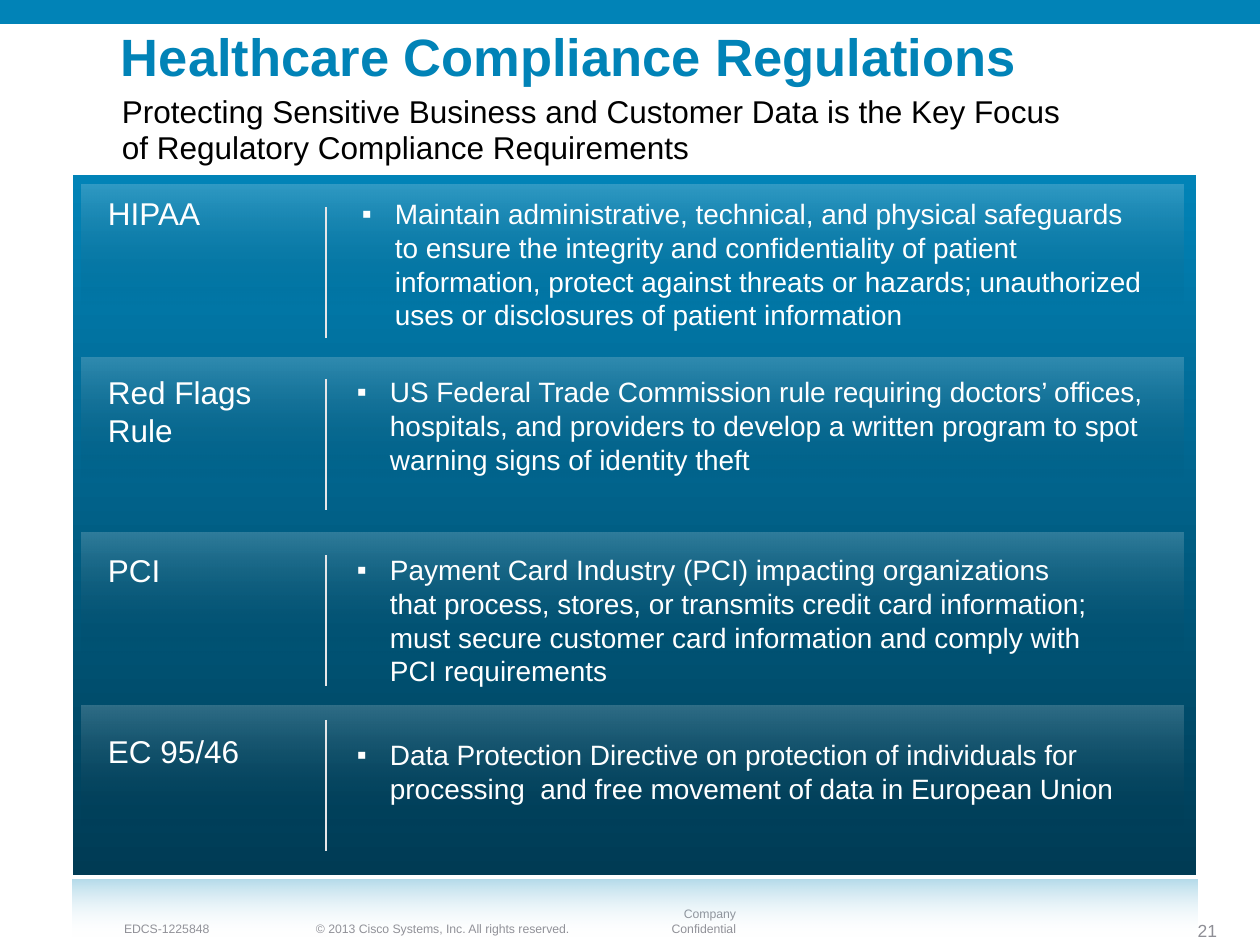
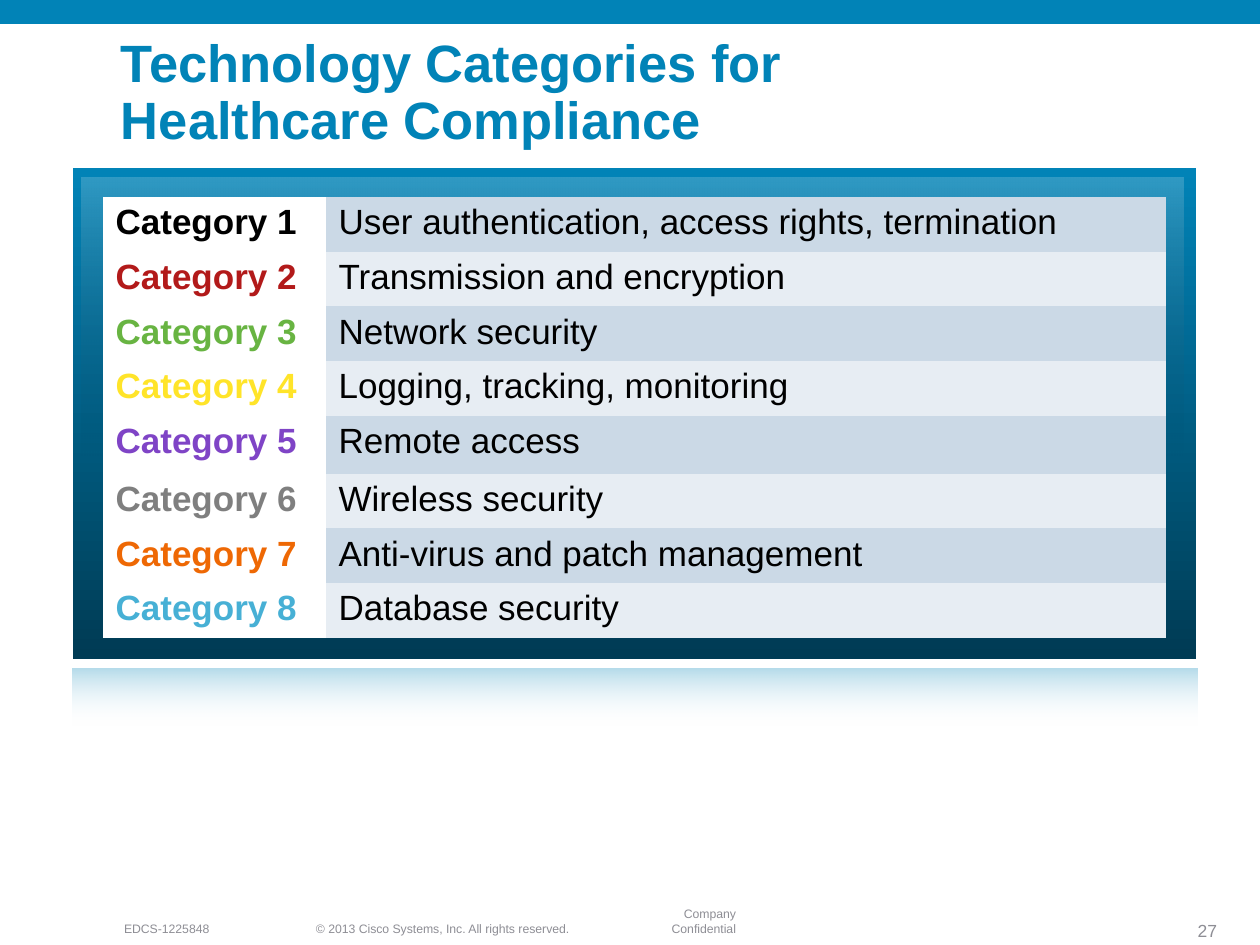
from pptx import Presentation
from pptx.dml.color import RGBColor as RGB
from pptx.enum.shapes import MSO_CONNECTOR as Link, MSO_SHAPE as Kind
from pptx.enum.text import MSO_ANCHOR as Anchor, PP_ALIGN as Align
from pptx.oxml.ns import qn
from pptx.util import Inches, Pt
from lxml.etree import SubElement as Sub

PX = 7257
BLUE = RGB(0x01, 0x83, 0xB7)
NAVY = RGB(0x00, 0x3B, 0x54)
WHITE = RGB(0xFF, 0xFF, 0xFF)
BLACK = RGB(0x00, 0x00, 0x00)
GRAY = RGB(0x8E, 0x8E, 0x95)
RULE = RGB(0xE6, 0xE6, 0xE8)
BANDS = [RGB(0xCB, 0xD9, 0xE6), RGB(0xE7, 0xED, 0xF3)]
FONT = "Arial"


def write(slide, text, x, y, w, h, size, color, bold=False, low=False,
          align=Align.LEFT, space=None, pad=5, bullet=False):
    box = slide.shapes.add_textbox(x * PX, y * PX, w * PX, h * PX)
    frame = box.text_frame
    frame.word_wrap = True
    frame.margin_left = frame.margin_right = 12 * PX
    frame.margin_top = frame.margin_bottom = pad * PX
    frame.vertical_anchor = Anchor.BOTTOM if low else Anchor.TOP
    para = frame.paragraphs[0]
    para.text = text
    para.alignment = align
    if space:
        para.line_spacing = space
    if bullet:
        props = para._p.get_or_add_pPr()
        props.set("marL", str(33 * PX))
        props.set("indent", str(-33 * PX))
        tint = Sub(props, qn("a:buClr"))
        Sub(tint, qn("a:srgbClr"), val=str(color))
        Sub(props, qn("a:buFont"), typeface=FONT)
        Sub(props, qn("a:buChar"), char="▪")
    for run in para.runs:
        run.font.name = FONT
        run.font.size = Pt(size)
        run.font.bold = bold
        run.font.color.rgb = color


def fade(slide, kind, x, y, w, h, colors, alphas=(100, 100)):
    shape = slide.shapes.add_shape(kind, x * PX, y * PX, w * PX, h * PX)
    shape.shadow.inherit = False
    shape.line.fill.background()
    shape.fill.gradient()
    shape.fill.gradient_angle = 270
    for stop, place, color in zip(shape.fill.gradient_stops, (0, 1), colors):
        stop.position = place
        stop.color.rgb = color
    marks = shape._element.spPr.iter(qn("a:srgbClr"))
    for mark, alpha in zip(list(marks), alphas):
        if alpha < 100:
            Sub(mark, qn("a:alpha"), val=str(alpha * 1000))
    if kind == Kind.ROUNDED_RECTANGLE:
        shape.adjustments[0] = 0


deck = Presentation()
deck.slide_width, deck.slide_height = Inches(10), Inches(7.5)

pages = [
    ("21", "Healthcare Compliance Regulations", 26, 68, 175, 700,
     [185, 358, 533, 706], 121, 880),
    ("27", "Technology Categories for\nHealthcare Compliance", 42, 115, 168, 491,
     [178], 281, 669),
]
for num, title, top, high, edge, tall, tiers, depth, base in pages:
    slide = deck.slides.add_slide(deck.slide_layouts[6])
    band = slide.shapes.add_shape(Kind.RECTANGLE, 0, 0, deck.slide_width, 24 * PX)
    band.shadow.inherit = False
    band.fill.solid()
    band.fill.fore_color.rgb = BLUE
    band.line.fill.background()
    write(slide, "EDCS-1225848", 112, 915, 132, 26, 7, GRAY, low=True)
    write(slide, "© 2013 Cisco Systems, Inc. All rights reserved.",
          304, 915, 300, 26, 7, GRAY, low=True)
    write(slide, "Company Confidential", 610, 915, 138, 26, 7, GRAY,
          low=True, align=Align.RIGHT)
    write(slide, num, 1169, 913, 60, 33, 10, GRAY, low=True, align=Align.RIGHT)
    write(slide, title, 109, top, 1025, high, 30, BLUE, bold=True, low=True,
          space=0.9, pad=6)
    fade(slide, Kind.RECTANGLE, 73, edge, 1123, tall, (BLUE, NAVY))
    for tier in tiers:
        fade(slide, Kind.RECTANGLE, 82, tier, 1102, depth, (WHITE, BLACK), (19, 0))
    fade(slide, Kind.ROUNDED_RECTANGLE, 73, base, 1124, 57, (BLUE, WHITE), (30, 0))

rules, groups = deck.slides

write(rules, "Protecting Sensitive Business and Customer Data is the Key Focus\n"
      "of Regulatory Compliance Requirements",
      110, 89, 1093, 84, 18, BLACK, space=0.95, pad=6)

laws = [
    ("HIPAA", 189, 207, 350, 191, 811,
     "Maintain administrative, technical, and physical safeguards to ensure "
     "the integrity and confidentiality of patient information, protect against "
     "threats or hazards; unauthorized uses or disclosures of patient information"),
    ("Red Flags Rule", 368, 379, 345, 369, 844,
     "US Federal Trade Commission rule requiring doctors’ offices, hospitals, "
     "and providers to develop a written program to spot warning signs of "
     "identity theft"),
    ("PCI", 546, 555, 345, 547, 844,
     "Payment Card Industry (PCI) impacting organizations\n"
     "that process, stores, or transmits credit card information;\n"
     "must secure customer card information and comply with\nPCI requirements"),
    ("EC 95/46", 727, 720, 345, 732, 844,
     "Data Protection Directive on protection of individuals for processing  "
     "and free movement of data in European Union"),
]
for name, top, start, left, head, wide, text in laws:
    write(rules, name, 96, top, 198, 88, 18, WHITE)
    line = rules.shapes.add_connector(Link.STRAIGHT, 326 * PX, start * PX,
                                      326 * PX, (start + 131) * PX)
    line.line.color.rgb = RULE
    line.line.width = Pt(0.75)
    Sub(line._element.spPr, qn("a:effectLst"))
    write(rules, text, left, head, wide, 121, 16, WHITE, pad=6, bullet=True)

topics = [
    ("User authentication, access rights, termination", BLACK),
    ("Transmission and encryption", RGB(0xB2, 0x1A, 0x1A)),
    ("Network security", RGB(0x68, 0xB4, 0x42)),
    ("Logging, tracking, monitoring", RGB(0xFF, 0xE4, 0x29)),
    ("Remote access", RGB(0x7F, 0x44, 0xC6)),
    ("Wireless security", RGB(0x7F, 0x7F, 0x7F)),
    ("Anti-virus and patch management", RGB(0xEE, 0x68, 0x04)),
    ("Database security", RGB(0x47, 0xB0, 0xD5)),
]
grid = groups.shapes.add_table(len(topics), 2, 103 * PX, 197 * PX,
                               1063 * PX, 415 * PX).table
grid.first_row = grid.horz_banding = False
style = grid._tbl.tblPr.find(qn("a:tableStyleId"))
style.text = "{2D5ABB26-0587-4C30-8999-92F81FD0307C}"
grid.columns[0].width = 223 * PX
grid.columns[1].width = 840 * PX
for i, (topic, color) in enumerate(topics):
    grid.rows[i].height = (58 if i == 4 else 51) * PX
    pair = [(f"Category {i + 1}", color, WHITE), (topic, BLACK, BANDS[i % 2])]
    for j, (text, ink, fill) in enumerate(pair):
        cell = grid.cell(i, j)
        cell.fill.solid()
        cell.fill.fore_color.rgb = fill
        cell.text_frame.text = text
        font = cell.text_frame.paragraphs[0].runs[0].font
        font.name = FONT
        font.size = Pt(20)
        font.bold = j == 0
        font.color.rgb = ink

deck.save("out.pptx")
